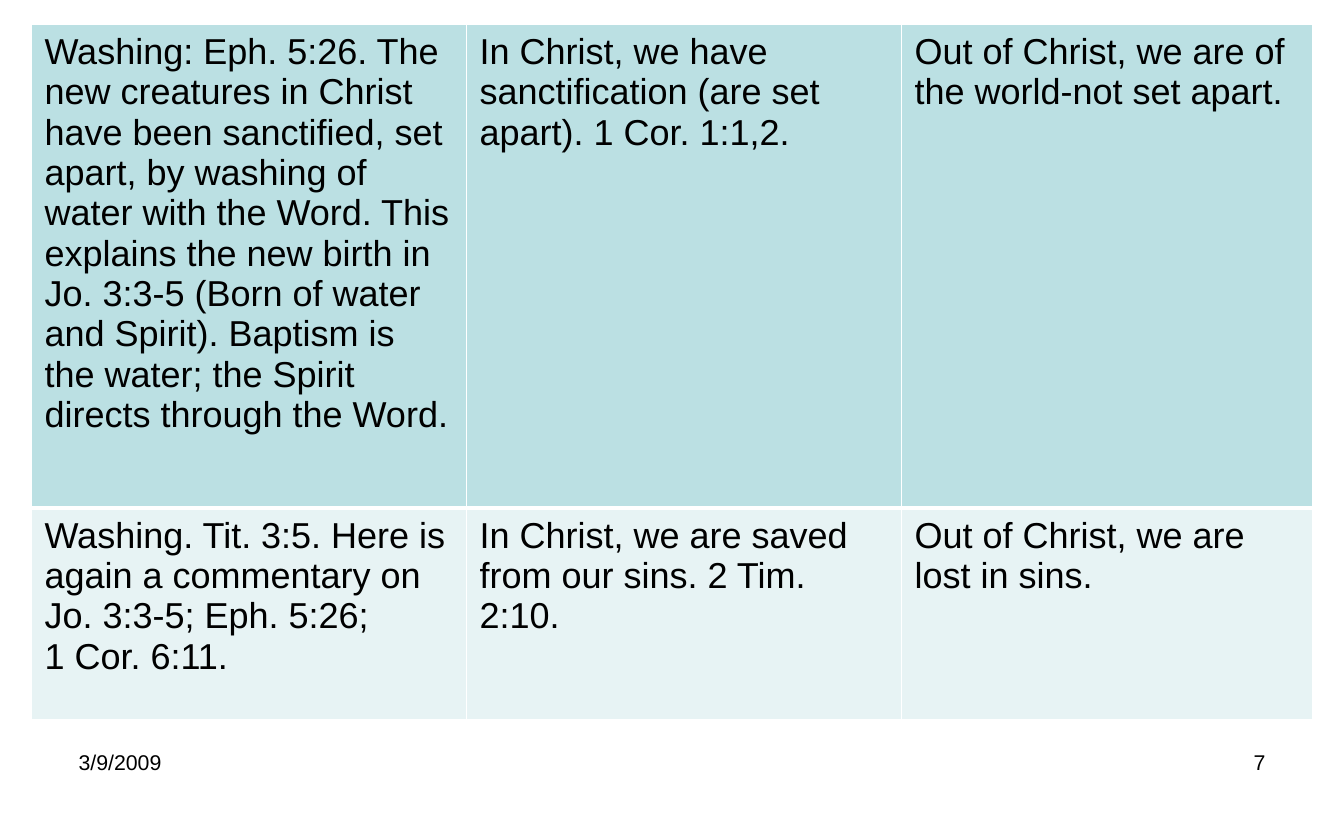
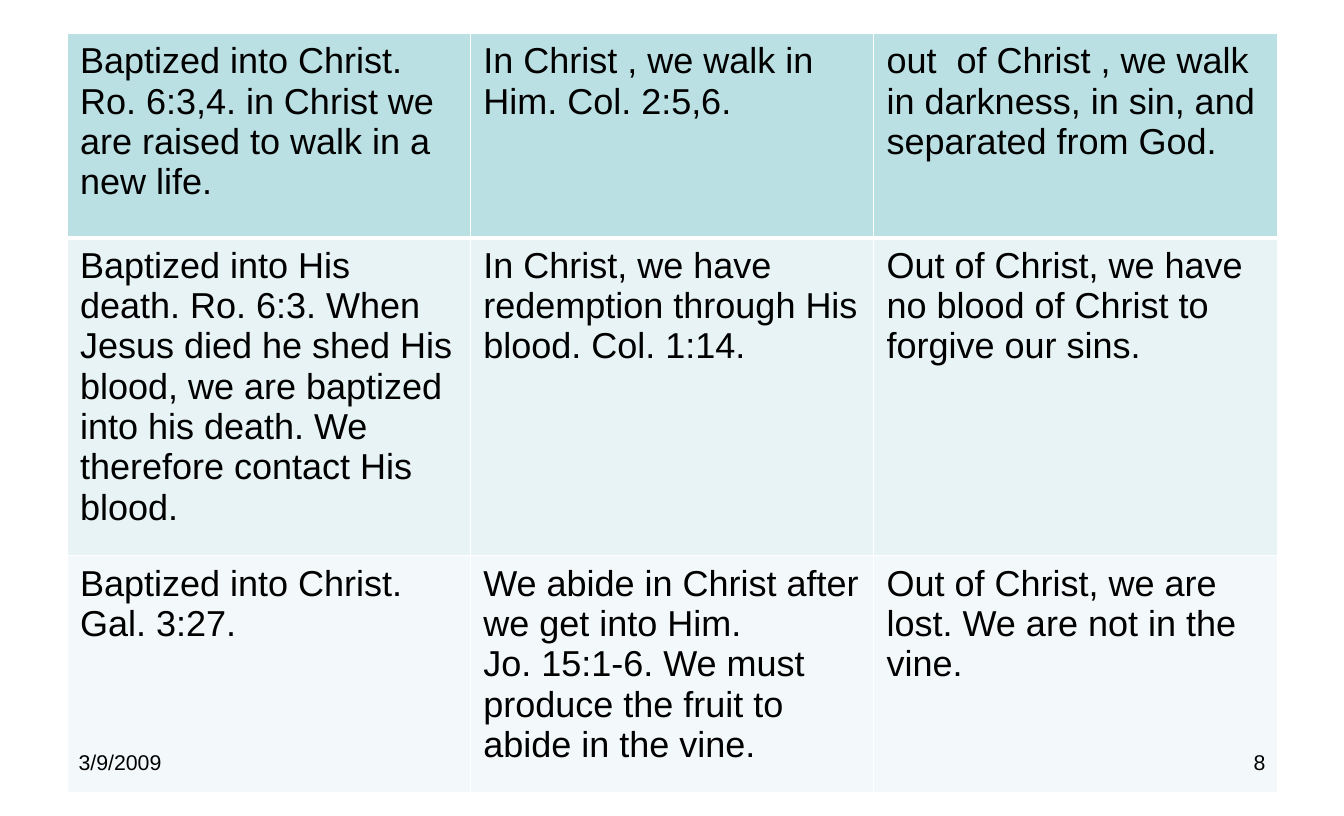
from dataclasses import dataclass

from lxml.etree import SubElement
from pptx import Presentation
from pptx.dml.color import RGBColor as Color
from pptx.enum.text import MSO_ANCHOR as Anchor, PP_ALIGN as Align
from pptx.oxml.ns import qn
from pptx.util import Cm, Pt


@dataclass(frozen=True)
class Theme:
    font: str = "Arial"
    text: str = "000000"
    border: str = "FFFFFF"
    row_fills: tuple = ("BBE0E3", "E7F3F4", "F3F9FA")
    cell_size: int = 27
    footer_size: int = 16
    thin: int = 1
    thick: int = 3


theme = Theme()


def write(text_frame, text, size, alignment=Align.LEFT):
    """Newlines part paragraphs; a vertical bar marks a line break."""
    for index, line in enumerate(text.split("\n")):
        paragraph = text_frame.add_paragraph() if index else text_frame.paragraphs[0]
        paragraph.alignment = alignment
        for part_index, part in enumerate(line.split("|")):
            if part_index:
                paragraph.add_line_break()
            run = paragraph.add_run()
            run.text = part
            run.font.name = theme.font
            run.font.size = Pt(size)
            run.font.color.rgb = Color.from_string(theme.text)


def add_borders(cell, row_index):
    # The rule below the first row is the thick one
    widths = {
        "lnL": theme.thin,
        "lnR": theme.thin,
        "lnT": theme.thick if row_index == 1 else theme.thin,
        "lnB": theme.thick if row_index == 0 else theme.thin,
    }
    properties = cell._tc.get_or_add_tcPr()
    for edge, width in widths.items():
        line = SubElement(properties, qn(f"a:{edge}"), w=str(Pt(width)))
        fill = SubElement(line, qn("a:solidFill"))
        SubElement(fill, qn("a:srgbClr"), val=theme.border)


# Tables: page number, left, top, column widths, row heights (cm), cell texts
pages = [
    (7, 0.84, 0.64, (11.51, 11.51, 10.87), (12.8, 5.61), [
        ("Washing: Eph. 5:26. The new creatures in Christ have been sanctified, "
         "set apart, by washing of water with the Word. This explains the new "
         "birth in Jo. 3:3-5 (Born of water and Spirit). Baptism is the water; "
         "the Spirit directs through the Word.",
         "In Christ, we have sanctification (are set apart). 1 Cor. 1:1,2.",
         "Out of Christ, we are of the world-not set apart."),
        ("Washing. Tit. 3:5. Here is again a commentary on Jo. 3:3-5; "
         "Eph. 5:26;|1 Cor. 6:11.",
         "In Christ, we are saved from our sins. 2 Tim. 2:10.",
         "Out of Christ, we are lost in sins."),
    ]),
    (8, 1.78, 0.89, (10.67,) * 3, (5.41, 7.98, 6.27), [
        ("Baptized into Christ.\n"
         "Ro. 6:3,4. in Christ we are raised to walk in a new life.",
         "In Christ , we walk in Him. Col. 2:5,6.",
         "out  of Christ , we walk in darkness, in sin, and separated from God."),
        ("Baptized into His death. Ro. 6:3. When Jesus died he shed His blood, "
         "we are baptized into his death. We therefore contact His blood.",
         "In Christ, we have redemption through His blood. Col. 1:14.",
         "Out of Christ, we have no blood of Christ to forgive our sins."),
        ("Baptized into Christ. Gal. 3:27.",
         "We abide in Christ after we get into Him.|Jo. 15:1-6. We must produce "
         "the fruit to abide in the vine.",
         "Out of Christ, we are lost. We are not in the vine."),
    ]),
]

presentation = Presentation()
presentation.slide_width = Cm(35.56)
presentation.slide_height = Cm(21.59)

for number, left, top, widths, heights, rows in pages:
    slide = presentation.slides.add_slide(presentation.slide_layouts[6])

    # Comparison table
    table = slide.shapes.add_table(
        len(rows), len(widths), Cm(left), Cm(top),
        Cm(sum(widths)), Cm(sum(heights))).table
    table.first_row = table.horz_banding = False
    for column, width in zip(table.columns, widths):
        column.width = Cm(width)
    for row_index, texts in enumerate(rows):
        table.rows[row_index].height = Cm(heights[row_index])
        for column_index, text in enumerate(texts):
            cell = table.cell(row_index, column_index)
            cell.margin_left = cell.margin_right = Cm(0.34)
            cell.margin_top = cell.margin_bottom = Cm(0.2)
            cell.vertical_anchor = Anchor.TOP
            add_borders(cell, row_index)
            cell.fill.solid()
            cell.fill.fore_color.rgb = Color.from_string(theme.row_fills[row_index])
            write(cell.text_frame, text, theme.cell_size)

    # Footer: date on the left, page number on the right
    for footer_left, text, alignment in (
            (1.78, "3/9/2009", Align.LEFT), (25.47, str(number), Align.RIGHT)):
        footer = slide.shapes.add_textbox(
            Cm(footer_left), Cm(19.66), Cm(8.31), Cm(1.5)).text_frame
        footer.word_wrap = True
        footer.margin_left = footer.margin_right = Cm(0.3)
        footer.margin_top = footer.margin_bottom = Cm(0.15)
        write(footer, text, theme.footer_size, alignment)

presentation.save("out.pptx")
